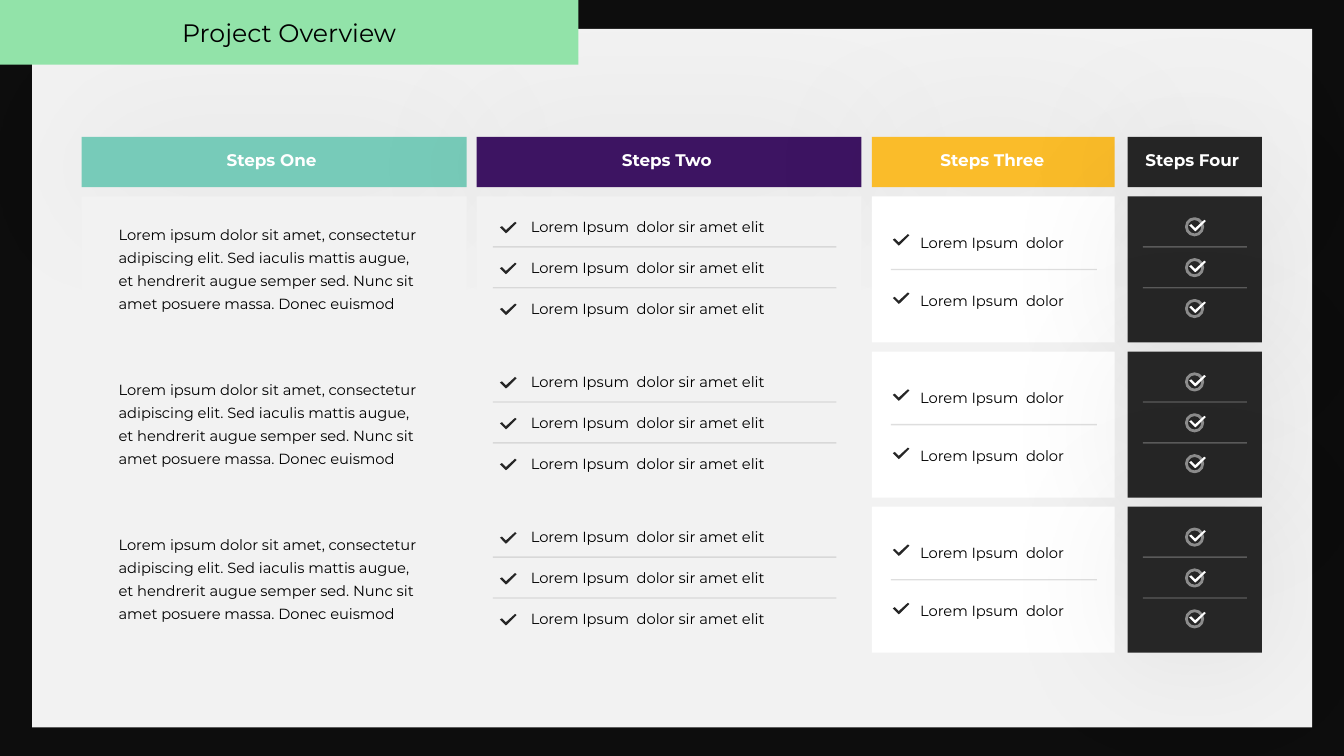
from lxml.etree import SubElement
from pptx import Presentation
from pptx.dml.color import RGBColor
from pptx.enum.shapes import MSO_CONNECTOR, MSO_SHAPE
from pptx.enum.text import MSO_ANCHOR, MSO_AUTO_SIZE, PP_ALIGN
from pptx.oxml.ns import qn
from pptx.util import Cm, Pt

TITLE = "Project Overview"
SUMMARY = ("Lorem ipsum dolor sit amet, consectetur adipiscing elit. "
           "Sed iaculis mattis augue, et hendrerit augue semper sed. "
           "Nunc sit amet posuere massa. Donec euismod")
# heading, left, width, heading colour, card colour, card shadow, label left, label width
COLUMNS = [
    ("Steps One", 2.06, 9.7, "77CBB9", "F2F2F2", False, 3.15, 7.39),
    ("Steps Two", 12.01, 9.7, "3D1462", "F2F2F2", False, 13.11, 7.39),
    ("Steps Three", 21.97, 6.12, "FABC2A", "FFFFFF", False, 22.33, 5.36),
    ("Steps Four ", 28.42, 3.38, "262626", "262626", True, 28.42, 3.38),
]
# Vertical places are measured from the top of a card
CHECKLISTS = [
    dict(item="Lorem Ipsum  dolor sir amet elit", count=3, pitch=1.03,
         text=(13.13, 0.41, 7.85), check=(12.6, 0.64, "262626"),
         divider=(12.42, 21.08, 1.27, "BFBFBF", 50)),
    dict(item="Lorem Ipsum  dolor", count=2, pitch=1.47,
         text=(22.94, 0.81, 5), check=(22.5, 0.95, "262626"),
         divider=(22.45, 27.64, 1.84, "BFBFBF", 50)),
    dict(count=3, pitch=1.03, ring=(29.9, 0.56, 0.41),
         check=(29.97, 0.59, "FFFFFF"),
         divider=(28.8, 31.42, 1.27, "F2F2F2", 25)),
]
CHECK_OUTLINE = [(0.38, 0), (0.15, 0.21), (0.05, 0.11), (0, 0.14),
                 (0.15, 0.29), (0.19, 0.26), (0.42, 0.03)]
ROWS = 3
CARD_TOP, CARD_HEIGHT, ROW_PITCH = 4.95, 3.68, 3.91
HEADING_TOP, HEADING_HEIGHT, LABEL_TOP = 3.45, 1.27, 3.66

BODY = dict(name="Montserrat", size=Pt(10.5))
HEADING = dict(name="Montserrat", size=Pt(12), bold=True)
TITLE_FONT = dict(name="Montserrat", size=Pt(18))
BOX_FRAME = dict(word_wrap=True, auto_size=MSO_AUTO_SIZE.SHAPE_TO_FIT_TEXT)


def apply(target, values):
    for name, value in values.items():
        setattr(target, name, value)


def paint(fill, colour):
    fill.solid()
    fill.fore_color.rgb = RGBColor.from_string(colour)


def set_alpha(colour_element, percent):
    SubElement(colour_element, qn("a:alpha"), val=str(percent * 1000))


def stroke(shape, colour, points, opacity):
    shape.line.width = Pt(points)
    paint(shape.line.fill, colour)
    set_alpha(shape.element.find(f".//{qn('a:ln')}//{qn('a:srgbClr')}"), opacity)


def cast_shadow(shape):
    """Add a wide, faint shadow just below the shape."""
    effects = shape.element.spPr.find(qn("a:effectLst"))
    outer = SubElement(effects, qn("a:outerShdw"), blurRad=str(Pt(100)),
                       dist=str(Pt(3)), dir="5400000", algn="t", rotWithShape="0")
    set_alpha(SubElement(outer, qn("a:srgbClr"), val="000000"), 8)


def fill_flat(shape, colour):
    """Plain fill with no outline and no inherited shadow."""
    paint(shape.fill, colour)
    shape.line.fill.background()
    shape.shadow.inherit = False
    return shape


def add_panel(shapes, left, top, width, height, colour, shadow=False):
    panel = fill_flat(shapes.add_shape(
        MSO_SHAPE.RECTANGLE, Cm(left), Cm(top), Cm(width), Cm(height)), colour)
    if shadow:
        cast_shadow(panel)
    return panel


def write(frame, text, font, colour="000000", **paragraph_format):
    paragraph = frame.paragraphs[0]
    apply(paragraph, paragraph_format)
    run = paragraph.add_run()
    run.text = text
    apply(run.font, font)
    paint(run.font.fill, colour)


def add_text(shapes, left, top, width, height, *content, **paragraph_format):
    frame = shapes.add_textbox(Cm(left), Cm(top), Cm(width), Cm(height)).text_frame
    apply(frame, BOX_FRAME)
    write(frame, *content, **paragraph_format)


def add_check(shapes, left, top, colour):
    points = [(Cm(left + x), Cm(top + y)) for x, y in CHECK_OUTLINE]
    builder = shapes.build_freeform(*points[0])
    builder.add_line_segments(points[1:], close=True)
    fill_flat(builder.convert_to_shape(), colour)


def add_ring(shapes, left, top, size):
    ring = shapes.add_shape(MSO_SHAPE.OVAL, Cm(left), Cm(top), Cm(size), Cm(size))
    ring.fill.background()
    ring.shadow.inherit = False
    stroke(ring, "F2F2F2", 2, 50)


def add_divider(shapes, start, end, y, colour, opacity):
    divider = shapes.add_connector(
        MSO_CONNECTOR.STRAIGHT, Cm(start), Cm(y), Cm(end), Cm(y))
    stroke(divider, colour, 1, opacity)
    SubElement(divider.element.spPr, qn("a:effectLst"))


def add_checklist(shapes, row_top, checklist):
    for index in range(checklist["count"]):
        top = row_top + index * checklist["pitch"]
        if "item" in checklist:
            left, offset, width = checklist["text"]
            add_text(shapes, left, top + offset, width, 0.71, checklist["item"], BODY)
        if "ring" in checklist:
            left, offset, size = checklist["ring"]
            add_ring(shapes, left, top + offset, size)
        left, offset, colour = checklist["check"]
        add_check(shapes, left, top + offset, colour)
        if index < checklist["count"] - 1:
            start, end, offset, colour, opacity = checklist["divider"]
            add_divider(shapes, start, end, top + offset, colour, opacity)


def main():
    deck = Presentation()
    apply(deck, dict(slide_width=Cm(33.87), slide_height=Cm(19.05)))
    slide = deck.slides.add_slide(deck.slide_layouts[6])
    paint(slide.background.fill, "0D0D0D")
    shapes = slide.shapes
    row_tops = [CARD_TOP + row * ROW_PITCH for row in range(ROWS)]

    add_panel(shapes, 0.81, 0.73, 32.26, 17.6, "F2F2F2")
    for _, left, width, colour, *_ in COLUMNS:
        add_panel(shapes, left, HEADING_TOP, width, HEADING_HEIGHT, colour, True)
    for top in row_tops:
        for _, left, width, _, colour, shadow, *_ in COLUMNS:
            add_panel(shapes, left, top, width, CARD_HEIGHT, colour, shadow)
    for heading, *_, left, width in COLUMNS:
        add_text(shapes, left, LABEL_TOP, width, 0.76, heading, HEADING, "FFFFFF",
                 alignment=PP_ALIGN.CENTER)
    for top in row_tops:
        add_text(shapes, 2.74, top + 0.48, 8.28, 2.54, SUMMARY, BODY, line_spacing=1.3)
        for checklist in CHECKLISTS:
            add_checklist(shapes, top, checklist)

    banner = add_panel(shapes, 0, 0, 14.58, 1.63, "92E3A9").text_frame
    apply(banner, dict(word_wrap=True, vertical_anchor=MSO_ANCHOR.MIDDLE))
    write(banner, TITLE, TITLE_FONT, alignment=PP_ALIGN.CENTER)
    deck.save("out.pptx")


if __name__ == "__main__":
    main()
